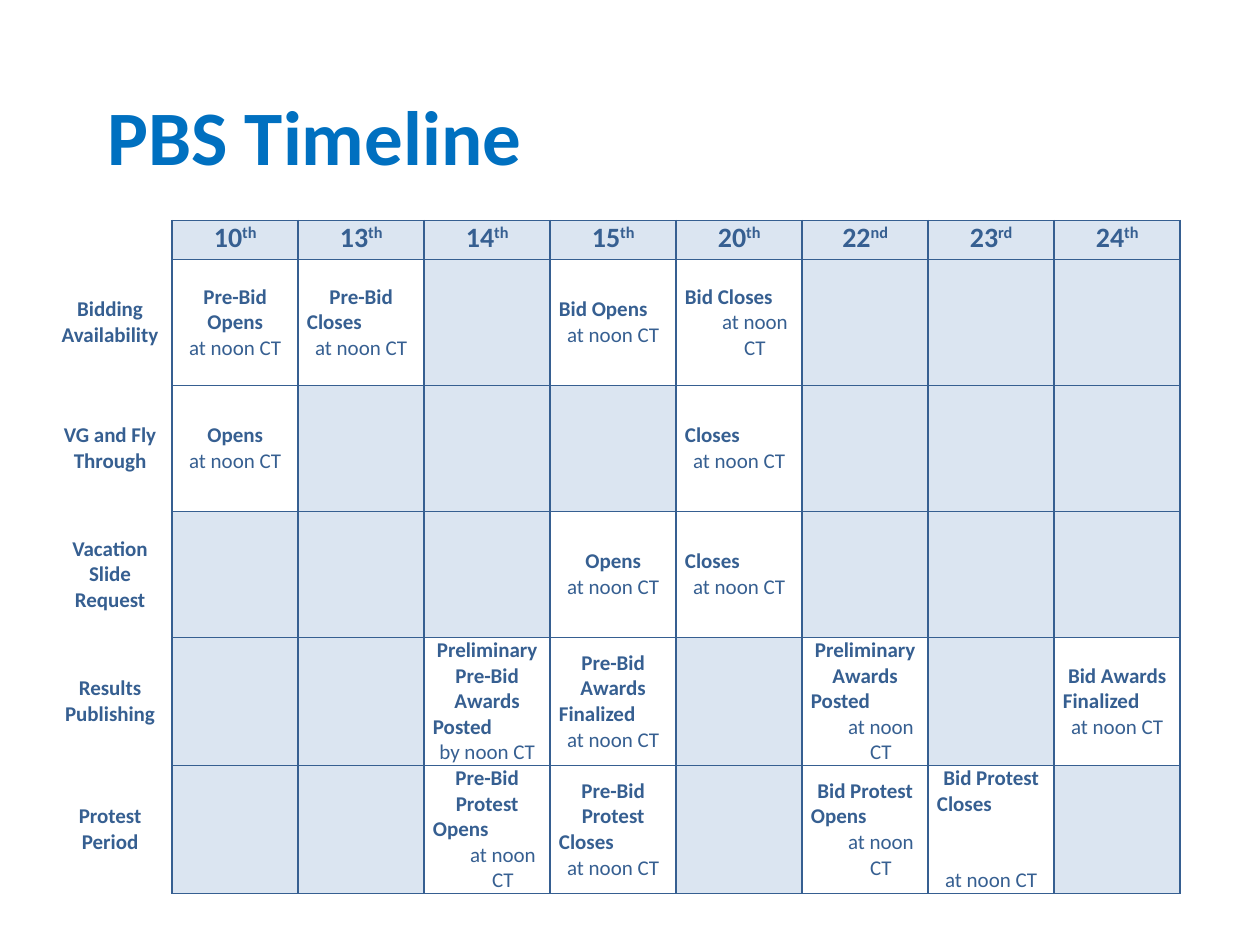
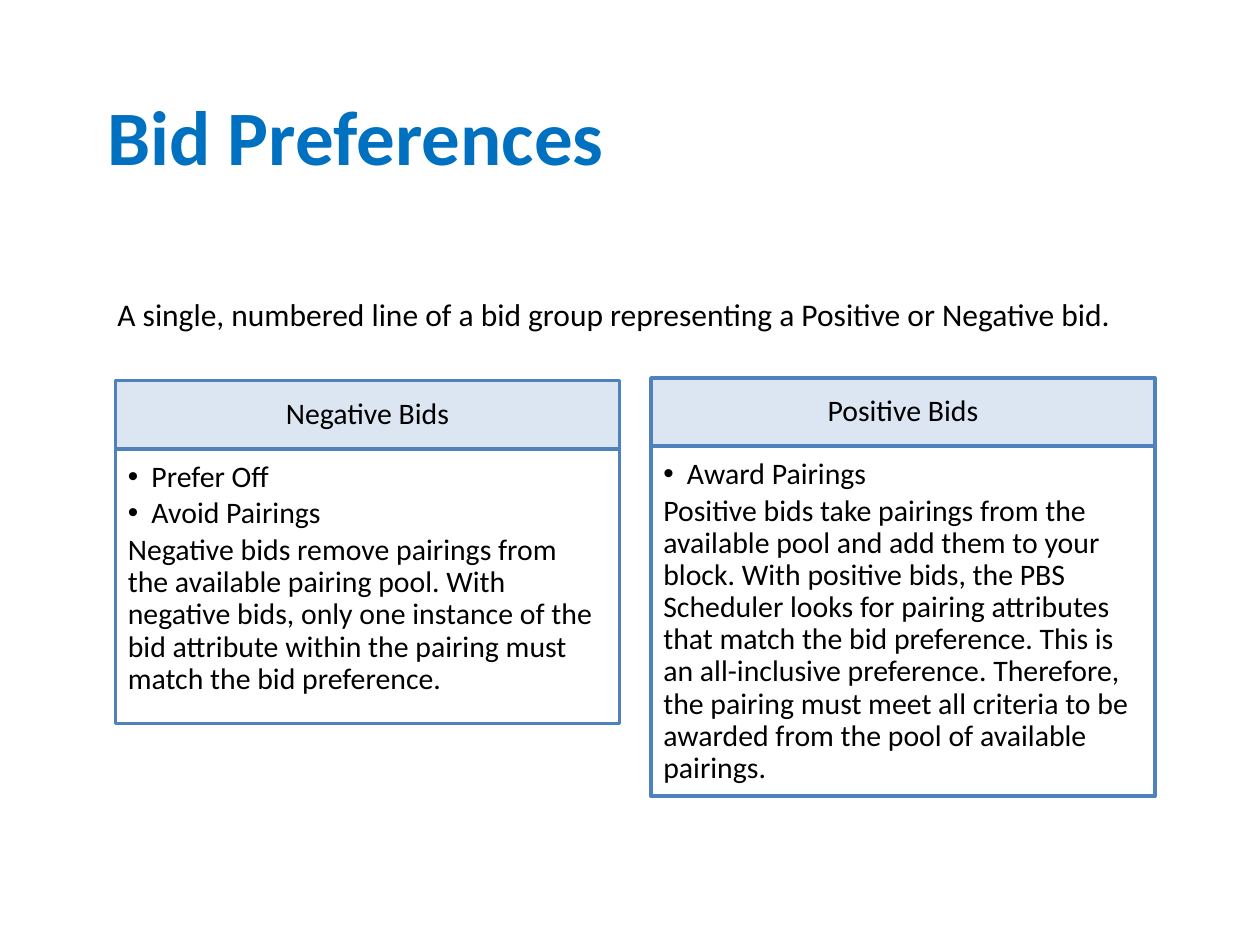
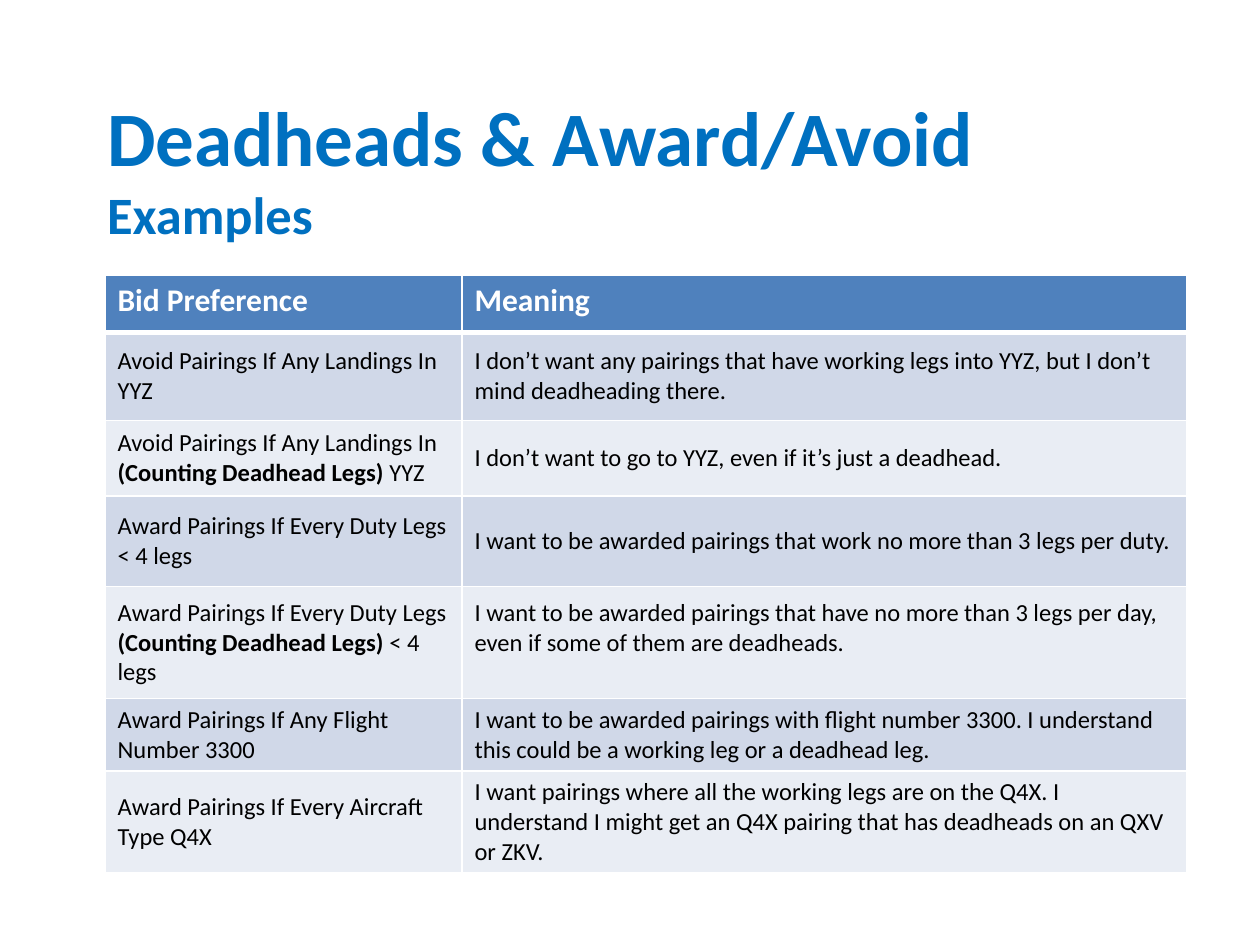
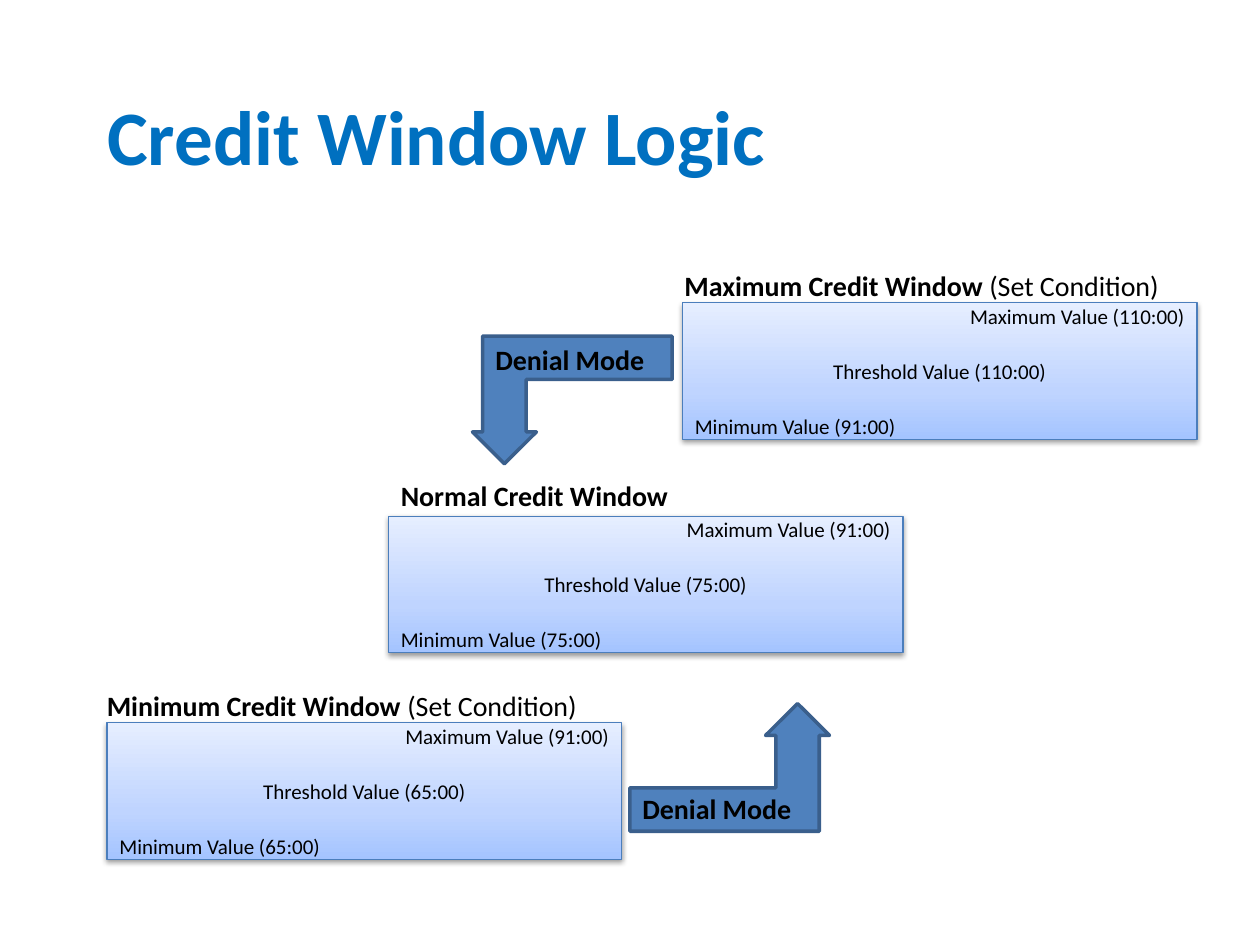
"""Build a four-slide deck about preferential bidding."""
from dataclasses import dataclass

from lxml.etree import SubElement
from pptx import Presentation
from pptx.dml.color import RGBColor
from pptx.enum.shapes import MSO_SHAPE as Preset
from pptx.enum.text import MSO_ANCHOR as Anchor, MSO_AUTO_SIZE as AutoSize, PP_ALIGN as Align
from pptx.oxml.ns import qn
from pptx.util import Pt


@dataclass(frozen=True)
class Theme:
    """Colours, font and type sizes of the deck."""
    font: str = "Calibri"
    title: str = "0070C0"
    ink: str = "000000"
    white: str = "FFFFFF"
    navy: str = "365F91"
    pale: str = "DBE5F1"
    heading_fill: str = "DCE6F2"
    accent: str = "4F81BD"
    arrow_edge: str = "3A5F8C"
    window_edge: str = "4B7EBC"
    bands: tuple = ("D0D8E8", "E9EDF4")
    window_stops: tuple = ((0, "A4C4FF"), (35, "BFD4FF"), (100, "E6EEFF"))
    title_size: int = 44
    subtitle_size: int = 30
    lead_size: int = 18
    bid_size: int = 17
    label_size: int = 16
    body_size: int = 14
    small_size: int = 12


@dataclass(frozen=True)
class Box:
    """A rectangle in points."""
    left: float
    top: float
    width: float
    height: float

    def lengths(self):
        """Return the four lengths as Pt values."""
        return Pt(self.left), Pt(self.top), Pt(self.width), Pt(self.height)


@dataclass(frozen=True)
class Event:
    """One entry of the timeline: centred words, left words and a time."""
    centred: str = ""
    left: str = ""
    time: str = "at noon CT"
    time_indent: float = 0
    time_gap: float = 0


THEME = Theme()
TITLE_BOX = Box(54, 42, 594, 70)

DAYS = (("10", "th"), ("13", "th"), ("14", "th"), ("15", "th"),
        ("20", "th"), ("22", "nd"), ("23", "rd"), ("24", "th"))
STAGES = (
    ("Bidding Availability", {
        "10": Event("Pre-Bid Opens"),
        "13": Event("Pre-Bid", "Closes"),
        "15": Event(left="Bid Opens"),
        "20": Event(left="Bid Closes", time_indent=18)}),
    ("VG and Fly Through", {
        "10": Event("Opens"),
        "20": Event(left="Closes")}),
    ("Vacation Slide Request", {
        "15": Event("Opens"),
        "20": Event(left="Closes")}),
    ("Results Publishing", {
        "14": Event("Preliminary Pre-Bid Awards", "Posted", "by noon CT"),
        "15": Event("Pre-Bid Awards", "Finalized"),
        "22": Event("Preliminary Awards", "Posted", time_indent=18),
        "24": Event("Bid Awards", "Finalized")}),
    ("Protest Period", {
        "14": Event("Pre-Bid Protest", "Opens", time_indent=18),
        "15": Event("Pre-Bid Protest", "Closes"),
        "22": Event("Bid Protest", "Opens", time_indent=18),
        "23": Event("Bid Protest", "Closes", time_gap=29)}),
)

COUNTING = "(Counting Deadhead Legs) "
EXAMPLES = (
    (("Avoid Pairings If Any Landings In YYZ",),
     "I don’t want any pairings that have working legs into YYZ, but I don’t mind deadheading there."),
    (("Avoid Pairings If Any Landings In ", COUNTING, "YYZ"),
     "I don’t want to go to YYZ, even if it’s just a deadhead."),
    (("Award Pairings If Every Duty Legs < 4 legs",),
     "I want to be awarded pairings that work no more than 3 legs per duty."),
    (("Award Pairings If Every Duty Legs ", COUNTING, "< 4 legs"),
     "I want to be awarded pairings that have no more than 3 legs per day, "
     "even if some of them are deadheads."),
    (("Award Pairings If Any Flight Number 3300",),
     "I want to be awarded pairings with flight number 3300. "
     "I understand this could be a working leg or a deadhead leg."),
    (("Award Pairings If Every Aircraft Type Q4X",),
     "I want pairings where all the working legs are on the Q4X. I understand I might get "
     "an Q4X pairing that has deadheads on an QXV or ZKV."),
)


def rgb(code):
    """Turn a hex code into a colour."""
    return RGBColor.from_string(code)


def add_span(para, text, size, color=THEME.ink, bold=False):
    """Add a formatted run to a paragraph."""
    span = para.add_run()
    span.text = text
    font = span.font
    font.name, font.size, font.bold = THEME.font, Pt(size), bold
    font.color.rgb = rgb(color)
    return span


def next_para(frame):
    """Return the empty first paragraph of a frame, or a new one."""
    first = frame.paragraphs[0]
    return frame.add_paragraph() if first.runs else first


def set_margins(target, left, top, right, bottom):
    """Set the insets of a cell or text frame."""
    target.margin_left, target.margin_top = Pt(left), Pt(top)
    target.margin_right, target.margin_bottom = Pt(right), Pt(bottom)


def add_title(page, box, *lines):
    """Place the title; lines after the first are subtitles."""
    title = page.shapes.title
    title.left, title.top, title.width, title.height = box.lengths()
    frame = title.text_frame
    frame.word_wrap, frame.auto_size = True, AutoSize.NONE
    frame.vertical_anchor = Anchor.MIDDLE
    for index, line in enumerate(lines):
        para = next_para(frame)
        para.alignment = Align.LEFT
        add_span(para, line, THEME.subtitle_size if index else THEME.title_size, THEME.title, True)


def add_label(page, box, size, strong="", plain=""):
    """Add a text box with bold words followed by plain ones."""
    frame = page.shapes.add_textbox(*box.lengths()).text_frame
    frame.word_wrap = True
    for text, bold in ((strong, True), (plain, False)):
        if text:
            add_span(frame.paragraphs[0], text, size, bold=bold)


def add_preset(page, preset, box, fill, edge, weight):
    """Add a flat preset shape."""
    shape = page.shapes.add_shape(preset, *box.lengths())
    shape.shadow.inherit = False
    shape.fill.solid()
    shape.fill.fore_color.rgb = rgb(fill)
    shape.line.color.rgb = rgb(edge)
    shape.line.width = Pt(weight)
    return shape


def add_grid(page, box, widths, heights):
    """Add a plain table with the given column widths and row heights."""
    table = page.shapes.add_table(len(heights), len(widths), *box.lengths()).table
    table.first_row = table.horz_banding = False
    for column, width in zip(table.columns, widths):
        column.width = Pt(width)
    for row, height in zip(table.rows, heights):
        row.height = Pt(height)
    return table


def format_cell(cell, fill, edge, sides="LRTB", bottom=1):
    """Set the borders and then the fill of a cell."""
    properties = cell._tc.get_or_add_tcPr()
    for side in sides:
        weight = bottom if side == "B" else 1
        line = SubElement(properties, qn(f"a:ln{side}"), w=str(Pt(weight)))
        SubElement(SubElement(line, qn("a:solidFill")), qn("a:srgbClr"), val=edge)
    if fill:
        cell.fill.solid()
        cell.fill.fore_color.rgb = rgb(fill)
    else:
        cell.fill.background()


def write_event(frame, event):
    """Write one timeline event into a cell."""
    parts = ((event.centred, Align.CENTER, True), (event.left, Align.LEFT, True),
             (event.time, Align.CENTER, False))
    for text, alignment, bold in parts:
        if text:
            para = next_para(frame)
            para.alignment = alignment
            add_span(para, text, THEME.small_size, THEME.navy, bold)
    para.space_before = Pt(event.time_gap)
    para._p.get_or_add_pPr().set("marL", str(Pt(event.time_indent)))


def add_timeline(page, box):
    """Draw the calendar of bidding stages."""
    table = add_grid(page, box, [71] + [72] * len(DAYS), [22.3] + [72] * len(STAGES))
    for row in table.rows:
        for index, cell in enumerate(row.cells):
            set_margins(cell, 5, 0, 5, 0)
            if index == 0:
                format_cell(cell, None, THEME.navy, "R")
    for column, (day, suffix) in enumerate(DAYS, 1):
        cell = table.cell(0, column)
        format_cell(cell, THEME.pale, THEME.navy)
        para = cell.text_frame.paragraphs[0]
        para.alignment = Align.CENTER
        add_span(para, day, THEME.label_size, THEME.navy, True)
        raised = add_span(para, suffix, THEME.label_size, THEME.navy, True)
        raised._r.get_or_add_rPr().set("baseline", "30000")
    for row, (stage, events) in enumerate(STAGES, 1):
        label = table.cell(row, 0)
        label.vertical_anchor = Anchor.MIDDLE
        para = label.text_frame.paragraphs[0]
        para.alignment = Align.CENTER
        add_span(para, stage, THEME.small_size, THEME.navy, True)
        for column, (day, _) in enumerate(DAYS, 1):
            cell = table.cell(row, column)
            cell.vertical_anchor = Anchor.MIDDLE
            event = events.get(day)
            format_cell(cell, None if event else THEME.pale, THEME.navy)
            if event:
                write_event(cell.text_frame, event)


def add_bullet(para, indent):
    """Give a paragraph a round bullet with a hanging indent."""
    properties = para._p.get_or_add_pPr()
    properties.set("marL", str(Pt(indent)))
    properties.set("indent", str(-Pt(indent)))
    SubElement(properties, qn("a:buFont"), typeface="Arial")
    SubElement(properties, qn("a:buChar"), char="•")


def add_bid_card(page, box, heading, bullets, text):
    """Draw a heading band above a box with bullets and a description."""
    band = 39
    head = add_preset(page, Preset.RECTANGLE, Box(box.left, box.top, box.width, band),
                      THEME.heading_fill, THEME.accent, 2)
    head.text_frame.vertical_anchor = Anchor.MIDDLE
    para = head.text_frame.paragraphs[0]
    para.alignment, para.line_spacing = Align.CENTER, 0.9
    add_span(para, heading, THEME.bid_size)

    body = add_preset(page, Preset.RECTANGLE,
                      Box(box.left, box.top + band, box.width, box.height - band),
                      THEME.white, THEME.accent, 2)
    frame = body.text_frame
    frame.word_wrap, frame.vertical_anchor = True, Anchor.TOP
    set_margins(frame, 7.2, 7.2, 9.5, 10.8)
    for line in (*bullets, text):
        para = next_para(frame)
        para.alignment, para.line_spacing, para.space_after = Align.LEFT, 0.9, Pt(2.6)
        if line in bullets:
            add_bullet(para, 13.5)
        add_span(para, line, THEME.bid_size)


def add_examples(page, box):
    """Draw the table of bid preferences and their meanings."""
    table = add_grid(page, box, (204, 414), (32.4, 50.4, 43.2, 51.8, 64, 39.6, 51.8))
    for column, heading in enumerate(("Bid Preference", "Meaning")):
        cell = table.cell(0, column)
        format_cell(cell, THEME.accent, THEME.white, bottom=3)
        add_span(cell.text_frame.paragraphs[0], heading, THEME.lead_size, THEME.white, True)
    for row, (preference, meaning) in enumerate(EXAMPLES, 1):
        for column, pieces in enumerate((preference, (meaning,))):
            cell = table.cell(row, column)
            cell.vertical_anchor = Anchor.MIDDLE
            format_cell(cell, THEME.bands[(row - 1) % 2], THEME.white)
            for piece in pieces:
                add_span(cell.text_frame.paragraphs[0], piece, THEME.body_size,
                         bold=piece == COUNTING)
    table.cell(4, 1).margin_bottom = Pt(20.7)


def shade_window(shape):
    """Give a credit window its gradient and soft shadow."""
    shape.fill.gradient()
    shape.fill.gradient_angle = 90
    properties = shape._element.spPr
    stops = properties.find(f".//{qn('a:gsLst')}")
    for stop in list(stops):
        stops.remove(stop)
    for place, color in THEME.window_stops:
        stop = SubElement(stops, qn("a:gs"), pos=str(place * 1000))
        SubElement(stop, qn("a:srgbClr"), val=color)
    shadow = SubElement(properties.find(qn("a:effectLst")), qn("a:outerShdw"),
                        blurRad=str(Pt(3.1)), dist=str(Pt(1.6)), dir="5400000", rotWithShape="0")
    tone = SubElement(shadow, qn("a:srgbClr"), val=THEME.ink)
    SubElement(tone, qn("a:alpha"), val="38000")


def add_credit_window(page, box, values):
    """Draw a window with its maximum, threshold and minimum values."""
    shape = add_preset(page, Preset.RECTANGLE, box, THEME.white, THEME.window_edge, 0.75)
    shade_window(shape)
    frame = shape.text_frame
    frame.word_wrap, frame.vertical_anchor = True, Anchor.MIDDLE
    rows = zip(("Maximum", "Threshold", "Minimum"), values,
               (Align.RIGHT, Align.CENTER, Align.LEFT))
    for index, (name, value, alignment) in enumerate(rows):
        para = next_para(frame)
        para.alignment = alignment
        if index:
            para.space_before = Pt(17)
        add_span(para, f"{name} Value ({value})", THEME.small_size)


def add_denial_arrow(page, box, rotation, label_box):
    """Draw a bent arrow with its label."""
    arrow = add_preset(page, Preset.BENT_UP_ARROW, box, THEME.accent, THEME.arrow_edge, 2)
    arrow.rotation = rotation
    for index, value in enumerate((0.34, 0.25, 0.25)):
        arrow.adjustments[index] = value
    add_label(page, label_box, THEME.label_size, "Denial Mode")


def build_timeline(page):
    """Fill the timeline slide."""
    add_title(page, TITLE_BOX, "PBS Timeline")
    add_timeline(page, Box(27.4, 126, 647, 382.3))


def build_preferences(page):
    """Fill the bid preferences slide."""
    add_title(page, TITLE_BOX, "Bid Preferences")
    add_label(page, Box(60, 165, 600, 29), THEME.lead_size,
              plain="A single, numbered line of a bid group representing a Positive or Negative bid.")
    add_bid_card(page, Box(66, 217.5, 288, 196), "Negative Bids",
                 ("Prefer Off", "Avoid Pairings"),
                 "Negative bids remove pairings from the available pairing pool. With negative bids, "
                 "only one instance of the bid attribute within the pairing must match the bid preference.")
    add_bid_card(page, Box(372, 216, 288, 239), "Positive Bids", ("Award Pairings",),
                 "Positive bids take pairings from the available pool and add them to your block. "
                 "With positive bids, the PBS Scheduler looks for pairing attributes that match the "
                 "bid preference. This is an all-inclusive preference. Therefore, the pairing must "
                 "meet all criteria to be awarded from the pool of available pairings.")


def build_examples(page):
    """Fill the deadhead examples slide."""
    add_examples(page, Box(60, 157.5, 618, 333.2))
    add_title(page, Box(54, 29.5, 630, 132.5), "Deadheads & Award/Avoid", "Examples")


def build_credit_windows(page):
    """Fill the credit window slide."""
    add_title(page, TITLE_BOX, "Credit Window Logic")
    condition = "(Set Condition)"
    windows = (
        ("Maximum Credit Window ", condition, (384, 150), (390, 173), ("110:00", "110:00", "91:00")),
        ("Normal Credit Window", "", (222, 270), (222, 295), ("91:00", "75:00", "75:00")),
        ("Minimum Credit Window ", condition, (54, 390), (61.2, 413), ("91:00", "65:00", "65:00")),
    )
    for name, note, label_corner, corner, values in windows:
        add_label(page, Box(*label_corner, 318, 26.6), THEME.label_size, name, note)
        add_credit_window(page, Box(*corner, 294, 78), values)
    add_denial_arrow(page, Box(270, 192, 114, 73), 180, Box(276, 192, 105, 26.6))
    add_denial_arrow(page, Box(360, 402, 114, 73), 0, Box(360, 448.5, 105, 26.6))


def main():
    """Build and save the deck."""
    deck = Presentation()
    deck.slide_width, deck.slide_height = Pt(720), Pt(540)
    title_only = deck.slide_layouts[5]
    for build in (build_timeline, build_preferences, build_examples, build_credit_windows):
        build(deck.slides.add_slide(title_only))
    deck.save("out.pptx")


if __name__ == "__main__":
    main()
